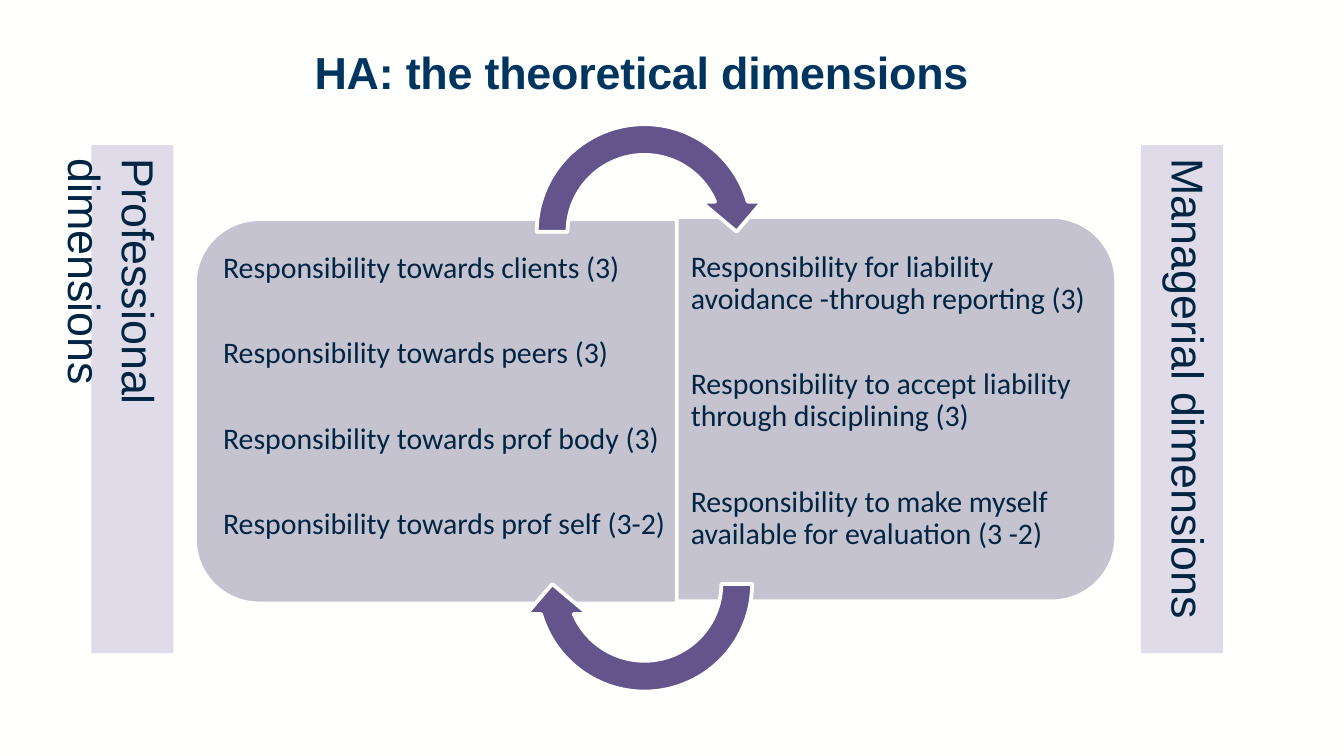
from lxml.etree import SubElement
from pptx import Presentation
from pptx.dml.color import RGBColor
from pptx.enum.shapes import MSO_SHAPE
from pptx.enum.text import MSO_ANCHOR, MSO_AUTO_SIZE, PP_ALIGN
from pptx.oxml.ns import qn
from pptx.util import Inches, Pt

PAPER = RGBColor(0xFF, 0xFF, 0xFE)
HEADING = RGBColor(0x00, 0x35, 0x60)
INK = RGBColor(0x00, 0x25, 0x42)
PANEL = RGBColor(0xC6, 0xC3, 0xD0)
ARROW = RGBColor(0x63, 0x54, 0x8B)
BANNER = RGBColor(0xDF, 0xDB, 0xE9)

PROFESSIONAL = [
    "Responsibility towards clients (3)",
    "Responsibility towards peers (3)",
    "Responsibility towards prof body (3)",
    "Responsibility towards prof self (3-2)",
]
MANAGERIAL = [
    "Responsibility for liability avoidance -through reporting (3)",
    "Responsibility to accept liability through disciplining (3)",
    "Responsibility to make myself available for evaluation (3 -2)",
]


def place(element, left, top, width, height):
    """Move and size an element, in inches."""
    element.left, element.top = Inches(left), Inches(top)
    element.width, element.height = Inches(width), Inches(height)


def style_paragraph(paragraph, font_name, size, color, bold=False):
    """Left-align a paragraph and set its font."""
    paragraph.alignment = PP_ALIGN.LEFT
    font = paragraph.font
    font.name, font.size, font.bold = font_name, Pt(size), bold
    font.color.rgb = color


def prepare_frame(frame):
    """Wrap text from the top at a fixed size."""
    frame.word_wrap = True
    frame.auto_size = MSO_AUTO_SIZE.NONE
    frame.vertical_anchor = MSO_ANCHOR.TOP


def add_filled_shape(slide, preset, box, color, outlined=True, rotation=0):
    """Add a flat shape with an optional pale outline."""
    shape = slide.shapes.add_shape(preset, *(Inches(length) for length in box))
    shape.shadow.inherit = False
    shape.rotation = rotation
    shape.fill.solid()
    shape.fill.fore_color.rgb = color
    if outlined:
        shape.line.color.rgb = PAPER
        shape.line.width = Pt(2)
    else:
        shape.line.fill.background()
    return shape


def fill_title(title, text):
    """Place and format the slide title, with slightly tightened letters."""
    place(title, 2.24, 0.33, 7.24, 0.8)
    prepare_frame(title.text_frame)
    title.text_frame.text = text
    heading = title.text_frame.paragraphs[0]
    heading.line_spacing = 0.9
    style_paragraph(heading, "Arial", 24, HEADING, bold=True)
    heading.font._element.set("spc", "-10")


def fill_list(body, box, margins, items):
    """Place a body placeholder and fill it with unbulleted items."""
    place(body, *box)
    frame = body.text_frame
    prepare_frame(frame)
    frame.margin_left, frame.margin_right = map(Inches, margins)
    frame.margin_top = frame.margin_bottom = Inches(0.11)
    frame.text = "\n".join(items)
    for paragraph in frame.paragraphs:
        paragraph.line_spacing = 0.9
        paragraph.space_before = Pt(0)
        paragraph.space_after = Pt(28.5)
        properties = paragraph._p.get_or_add_pPr()
        properties.set("marL", "0")
        properties.set("indent", "0")
        SubElement(properties, qn("a:buNone"))
        style_paragraph(paragraph, "Calibri", 16, INK)


def add_panel(slide, body, box, rotation):
    """Add a panel rounded on its outer side, behind its list."""
    panel = add_filled_shape(
        slide, MSO_SHAPE.ROUND_2_SAME_RECTANGLE, box, PANEL, rotation=rotation)
    panel.adjustments[0] = 0.167
    body.element.addprevious(panel.element)


def add_cycle_arrow(slide, top, rotation):
    """Add a half-circle arrow linking the two panels."""
    arrow = add_filled_shape(
        slide, MSO_SHAPE.CIRCULAR_ARROW, (3.88, top, 1.83, 1.83), ARROW, rotation=rotation)
    for index, value in enumerate((0.125, 11.423, 204.577, 108, 0.125)):
        arrow.adjustments[index] = value


def add_banner(slide, left, text):
    """Add a side banner with text running downwards."""
    banner = add_filled_shape(
        slide, MSO_SHAPE.RECTANGLE, (left, 1.08, 0.61, 3.78), BANNER, outlined=False)
    frame = banner.text_frame
    prepare_frame(frame)
    frame._txBody.bodyPr.set("vert", "eaVert")
    frame.text = text
    style_paragraph(frame.paragraphs[0], "Arial", 24, INK)


def main():
    """Build the slide and save it."""
    presentation = Presentation()
    presentation.slide_width = Inches(10)
    presentation.slide_height = presentation.slide_width * 9 // 16
    slide = presentation.slides.add_slide(presentation.slide_layouts.get_by_name("Two Content"))
    slide.background.fill.solid()
    slide.background.fill.fore_color.rgb = PAPER
    title, professional, managerial = slide.placeholders

    fill_title(title, "HA: the theoretical dimensions")
    fill_list(professional, (1.59, 1.77, 4.28, 2.58), (0.07, 0.1), PROFESSIONAL)
    fill_list(managerial, (5.04, 1.76, 3.13, 2.58), (0.1, 0.07), MANAGERIAL)
    add_panel(slide, professional, (2.23, 0.85, 2.86, 4.42), 270)
    add_panel(slide, managerial, (5.24, 1.41, 2.86, 3.27), 90)
    add_cycle_arrow(slide, 0.81, 0)
    add_cycle_arrow(slide, 3.43, 180)
    add_banner(slide, 0.68, "Professional dimensions")
    add_banner(slide, 8.49, "Managerial dimensions")
    presentation.save("out.pptx")


if __name__ == "__main__":
    main()
